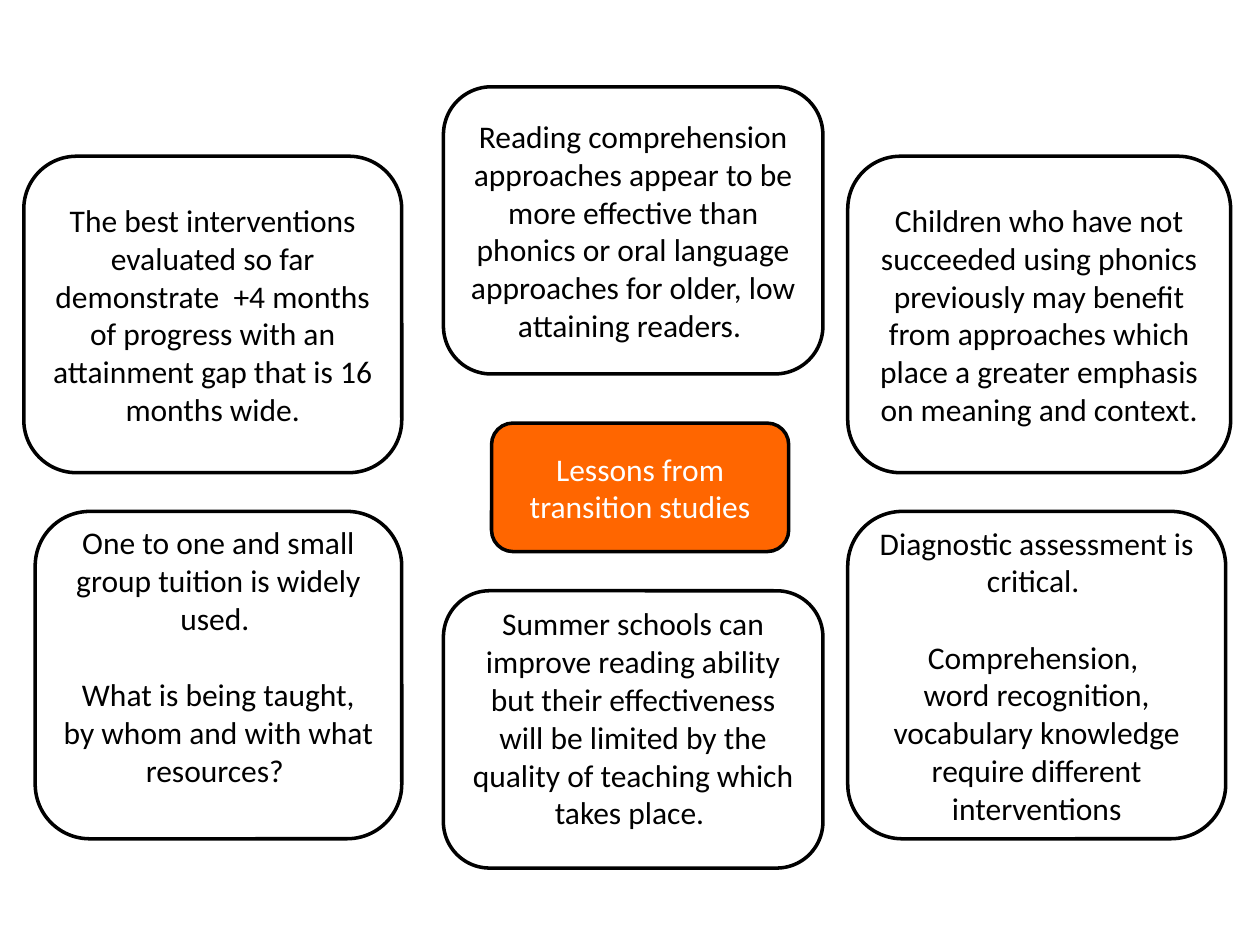
from pptx import Presentation
from pptx.dml.color import RGBColor
from pptx.enum.shapes import MSO_SHAPE
from pptx.enum.text import MSO_ANCHOR, PP_ALIGN
from pptx.util import Cm, Pt

THEME = {
    "ink": RGBColor(0, 0, 0),
    "paper": RGBColor(255, 255, 255),
    "accent": RGBColor(255, 102, 0),
    "font": "Calibri",
    "size": Pt(18),
    "outline": Pt(2),
    "gap": Pt(22),
}
FRAME_FORMAT = {
    "word_wrap": True,
    "vertical_anchor": MSO_ANCHOR.MIDDLE,
    "margin_left": Cm(0.25),
    "margin_right": Cm(0.25),
    "margin_top": Cm(0.13),
}
FONT_FORMAT = {"name": THEME["font"], "size": THEME["size"]}


def apply_format(target, values):
    for attribute, value in values.items():
        setattr(target, attribute, value)


deck = Presentation()
apply_format(deck, {"slide_width": Cm(25.4), "slide_height": Cm(19.05)})
slide = deck.slides.add_slide(deck.slide_layouts[6])

left_x, middle_x, right_x = 0.48, 8.94, 17.09
upper_y, lower_y = 3.15, 10.31
middle_width, upper_height, lower_height = 7.65, 6.38, 6.6
plain_bottom = 0.13

lessons = [
    ((9.91, 8.53, 5.99, 2.59), THEME["accent"], THEME["paper"], plain_bottom,
     [("Lessons from transition studies", False)]),
    ((middle_x, 1.75, middle_width, 5.79), None, THEME["ink"], plain_bottom,
     [("Reading comprehension approaches appear to be more effective than "
       "phonics or oral language approaches for older, low attaining readers. ", False)]),
    ((right_x, upper_y, 7.72, upper_height), None, THEME["ink"], plain_bottom,
     [("Children who have not succeeded using phonics previously may benefit "
       "from approaches which place a greater emphasis on meaning and context.", False)]),
    ((left_x, upper_y, 7.62, upper_height), None, THEME["ink"], plain_bottom,
     [("The best interventions evaluated so far demonstrate  +4 months of "
       "progress with an attainment gap that is 16 months wide.", False)]),
    ((middle_x, 11.91, middle_width, 5.59), None, THEME["ink"], 0.6,
     [("Summer schools can improve reading ability but their effectiveness "
       "will be limited by the quality of teaching which takes place. ", False)]),
    ((0.71, lower_y, 7.39, lower_height), None, THEME["ink"], 0.9,
     [("One to one and small group tuition is widely used. ", False),
      ("What is being taught, by whom and with what resources? ", True)]),
    ((right_x, lower_y, 7.62, lower_height), None, THEME["ink"], plain_bottom,
     [("Diagnostic assessment is critical. ", False),
      ("Comprehension, ", True),
      ("word recognition,", False),
      ("vocabulary knowledge require different interventions", False)]),
]

for bounds, fill_color, text_color, bottom_margin, statements in lessons:
    lesson = slide.shapes.add_shape(
        MSO_SHAPE.ROUNDED_RECTANGLE, *(Cm(length) for length in bounds)
    )
    lesson.shadow.inherit = False
    if fill_color is None:
        lesson.fill.background()
    else:
        lesson.fill.solid()
        lesson.fill.fore_color.rgb = fill_color
    lesson.line.color.rgb = THEME["ink"]
    lesson.line.width = THEME["outline"]

    frame = lesson.text_frame
    apply_format(frame, FRAME_FORMAT | {"margin_bottom": Cm(bottom_margin)})
    for index, (statement, starts_group) in enumerate(statements):
        paragraph = frame.add_paragraph() if index else frame.paragraphs[0]
        paragraph.alignment = PP_ALIGN.CENTER
        if starts_group:
            paragraph.space_before = THEME["gap"]
        words = paragraph.add_run()
        words.text = statement
        apply_format(words.font, FONT_FORMAT)
        words.font.color.rgb = text_color

deck.save("out.pptx")
